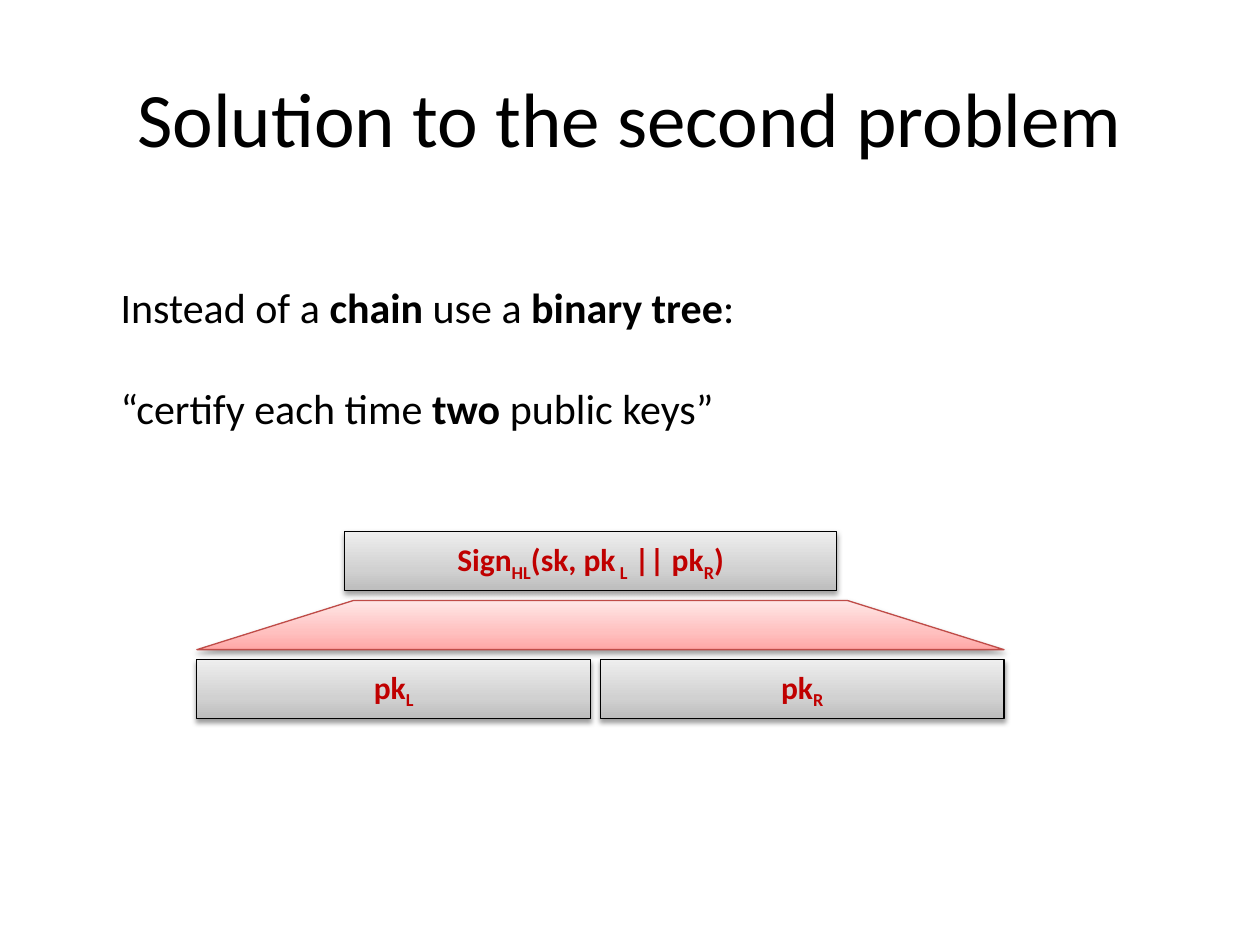
from lxml import etree
from pptx import Presentation
from pptx.dml.color import RGBColor as RGB
from pptx.enum.shapes import MSO_SHAPE as SHAPE
from pptx.enum.text import MSO_ANCHOR as ANCHOR, MSO_AUTO_SIZE as FIT, PP_ALIGN as ALIGN
from pptx.oxml import parse_xml
from pptx.util import Pt

INK = {"black": "000000", "red": "C00000", "rose": "BF4C48"}
FADES = {
    "grey": ["BDBDBD", "D1D1D1", "EEEEEE"],
    "pink": ["FFA6A5", "FFC0BF", "FFE7E7"],
}
NS = 'xmlns:a="http://schemas.openxmlformats.org/drawingml/2006/main"'


def write(para, text, size, ink="black", bold=False, sub=False):
    run = para.add_run()
    run.text = text
    font = run.font
    font.name, font.size, font.bold = "Calibri", Pt(size), bold
    font.color.rgb = RGB.from_string(INK[ink])
    if sub:
        run._r.get_or_add_rPr().set("baseline", "-25000")


def block(kind, left, top, width, height, fade, edge):
    shape = slide.shapes.add_shape(kind, Pt(left), Pt(top), Pt(width), Pt(height))
    shape.line.color.rgb = RGB.from_string(INK[edge])
    shape.line.width = Pt(0.75)
    shape.fill.gradient()
    grad = shape._element.spPr.find("{*}gradFill")
    stops = "".join(
        f'<a:gs pos="{pos}000"><a:srgbClr val="{tone}"/></a:gs>'
        for pos, tone in zip((0, 35, 100), FADES[fade])
    )
    grad.replace(grad.find("{*}gsLst"), parse_xml(f"<a:gsLst {NS}>{stops}</a:gsLst>"))
    grad.find("{*}lin").set("ang", "16200000")
    shape.shadow.inherit = False
    shape._element.spPr.find("{*}effectLst").append(etree.fromstring(
        f'<a:outerShdw {NS} blurRad="{Pt(3.1)}" dist="{Pt(1.6)}" dir="5400000" rotWithShape="0">'
        f'<a:srgbClr val="{INK["black"]}"><a:alpha val="38000"/></a:srgbClr></a:outerShdw>'
    ))
    return shape


deck = Presentation()
deck.slide_width, deck.slide_height = Pt(720), Pt(540)
slide = deck.slides.add_slide(deck.slide_layouts[5])

title = slide.shapes.title
title.left, title.top, title.width, title.height = Pt(36), Pt(21.6), Pt(648), Pt(90)
title.text_frame.vertical_anchor = ANCHOR.MIDDLE
head = title.text_frame.paragraphs[0]
head.alignment = ALIGN.CENTER
write(head, "Solution to the second problem", 44)

link = block(SHAPE.TRAPEZOID, 112.5, 343.13, 461.25, 28.13, "pink", "rose")
link.adjustments[0] = 3.186

nodes = [
    (196.88, 303.75, 281.25, [("Sign", False), ("HL", True), ("(sk, pk", False), (" L", True),
                              (" || pk", False), ("R", True), (")", False)]),
    (112.5, 376.88, 225, [("pk", False), ("L", True)]),
    (343.13, 376.88, 230.63, [("pk", False), ("R", True)]),
]
for left, top, width, parts in nodes:
    frame = block(SHAPE.RECTANGLE, left, top, width, 33.75, "grey", "black").text_frame
    frame.vertical_anchor = ANCHOR.MIDDLE
    para = frame.paragraphs[0]
    para.alignment = ALIGN.CENTER
    for text, sub in parts:
        write(para, text, 18, "red", True, sub)

note = slide.shapes.add_textbox(Pt(61.88), Pt(157.5), Pt(388), Pt(94.5)).text_frame
note.word_wrap = True
note.auto_size = FIT.SHAPE_TO_FIT_TEXT
first, second = note.paragraphs[0], note.add_paragraph()
second.space_before = Pt(29)
lines = [
    (first, [("Instead of a ", False), ("chain ", True), ("use a", False),
             (" binary tree", True), (":", False)]),
    (second, [("“certify each time ", False), ("two", True), (" public keys”", False)]),
]
for para, parts in lines:
    for text, bold in parts:
        write(para, text, 24, bold=bold)

deck.save("out.pptx")
